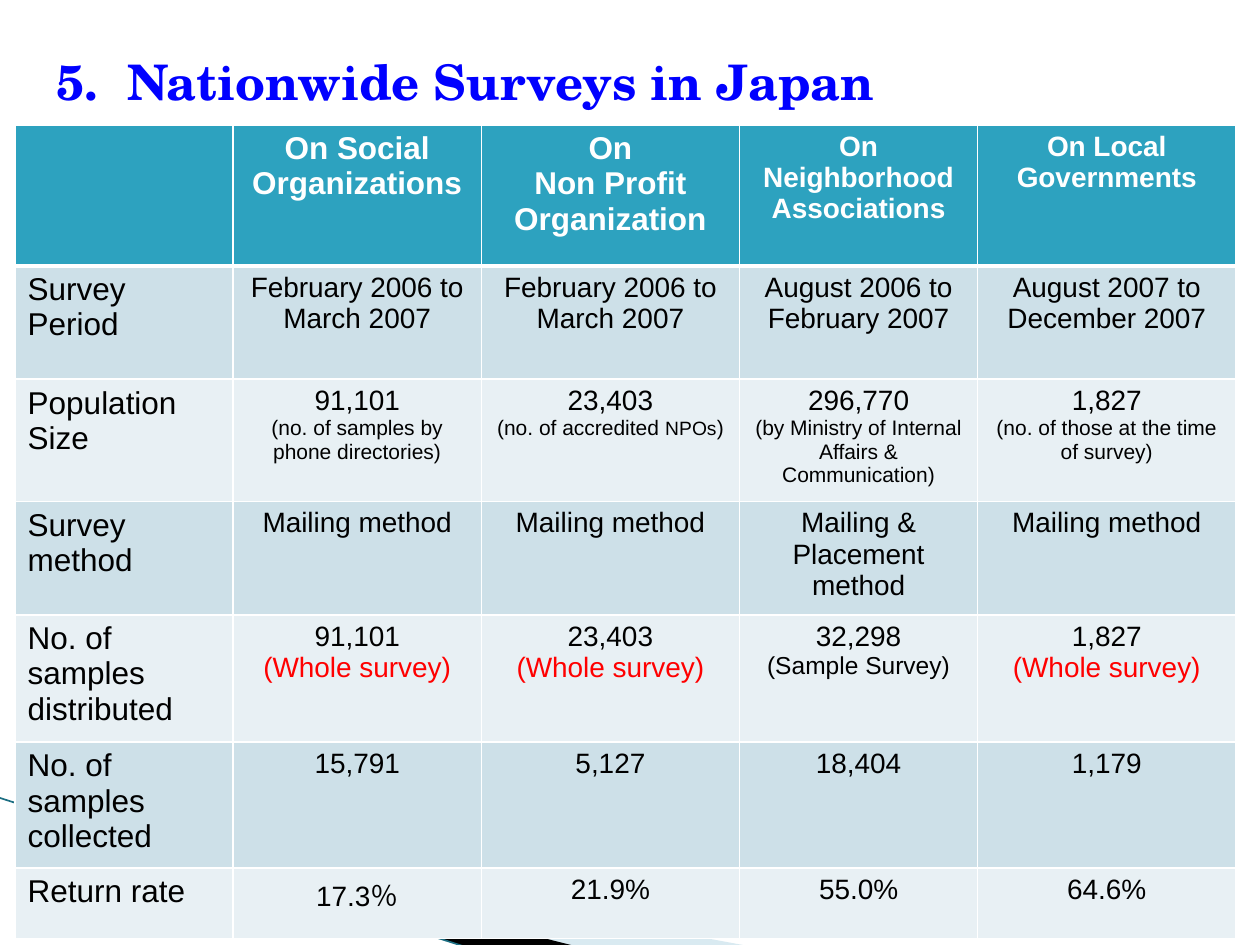
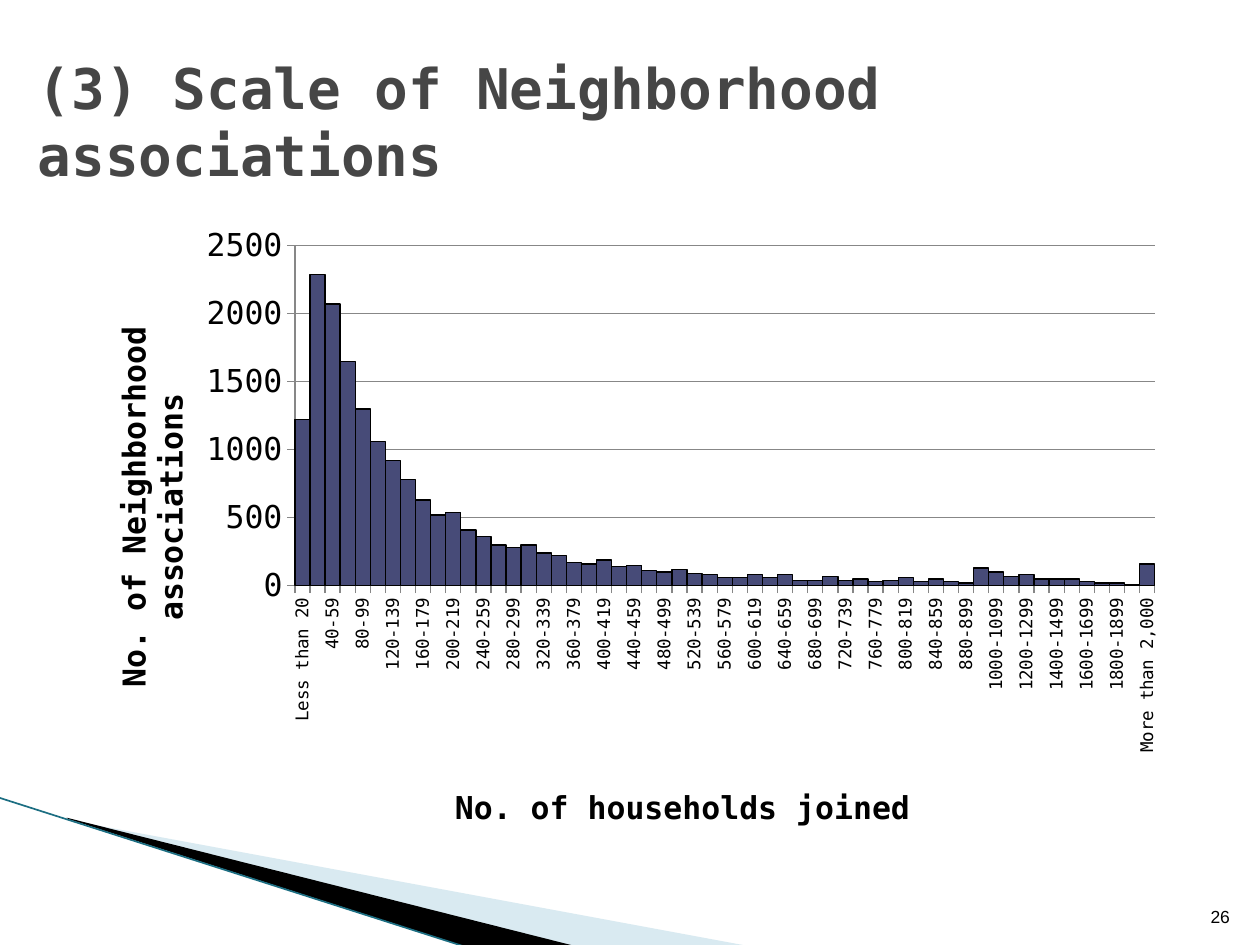
from dataclasses import dataclass

from lxml import etree
from pptx import Presentation
from pptx.chart import data as cd
from pptx.dml import color as col
from pptx.enum import chart as ch, shapes as sh, text as tx
from pptx.oxml import ns
from pptx.util import Inches, Pt


@dataclass(frozen=True)
class Theme:
    # Fonts
    sans: str = "Arial"
    mono: str = "DejaVu Sans Mono"
    serif: str = "TeX Gyre Schola"
    # Colours
    ink: str = "000000"
    white: str = "FFFFFF"
    head: str = "2DA2BF"
    odd: str = "CDE0E8"
    even: str = "E8F0F4"
    red: str = "FF0000"
    blue: str = "0000FF"
    grey: str = "464646"
    bar: str = "474B78"
    grid: str = "878787"
    pale: str = "A0CBDC"
    edge: str = "1C6E82"
    # Type sizes
    big: int = 18
    mid: int = 16
    small: int = 14
    note: int = 12
    tiny: int = 10


T = Theme()

# ---- Survey table: a cell is plain text or a list of paragraphs of runs
SIZES = {"head": T.big, "thin": T.mid, "row": T.big, "cell": T.mid,
         "note": T.note, "abbr": 11, "whole": T.mid, "part": T.small}
INKS = {"head": T.white, "thin": T.white, "whole": T.red}


def noted(num, note, kind="note"):
    return [[(num, "cell")], [(note, kind)]]


def whole(num):
    return noted(num, "(Whole survey)", "whole")


HEADS = ["", "On Social Organizations",
         [[("On", "head")], [("Non Profit Organization", "head")]],
         [[("On Neighborhood Associations", "thin")]],
         [[("On Local Governments", "thin")]]]
NPOS = [[("23,403", "cell")],
        [("(no. of accredited ", "note"), ("NPOs", "abbr"), (")", "note")]]
MAIL = "Mailing method"
ROWS = [
    HEADS,
    ["Survey Period", "February 2006 to March 2007", "February 2006 to March 2007",
     "August 2006 to February 2007", "August 2007 to December 2007"],
    ["Population Size", noted("91,101", "(no. of samples by phone directories)"), NPOS,
     noted("296,770", "(by Ministry of Internal Affairs & Communication)"),
     noted("1,827", "(no. of those at the time of survey)")],
    ["Survey method", MAIL, MAIL, "Mailing & Placement method", MAIL],
    ["No. of samples distributed", whole("91,101"), whole("23,403"),
     noted("32,298", "(Sample Survey)", "part"), whole("1,827")],
    ["No. of samples collected", "15,791", "5,127", "18,404", "1,179"],
    ["Return rate", "17.3％", "21.9%", "55.0%", "64.6%"],
]
WIDTHS = [1.73, 1.97, 2.05, 1.89, 2.05]
HEIGHTS = [1.12, 0.9, 0.97, 0.9, 1.01, 1, 0.56]

# ---- Chart data: households per association, in steps of 20, then of 100
BINS = (["Less than 20"]
        + [f"{n}-{n + 19}" for n in range(20, 900, 20)]
        + [f"{n}-{n + 99}" for n in range(900, 2000, 100)]
        + ["More than 2,000"])
COUNTS = [
    1220, 2290, 2070, 1650, 1300, 1060, 920, 780, 630, 520, 540, 410, 360, 300, 280,
    300, 240, 220, 170, 160, 190, 140, 150, 110, 100, 120, 90, 80, 60, 60, 80, 60, 80,
    40, 40, 70, 40, 50, 30, 40, 60, 30, 50, 30, 20, 130, 100, 70, 80, 50, 50, 50, 30,
    20, 20, 10, 160]


# ---- Helpers
def rgb(code):
    return col.RGBColor.from_string(code)


def style(font, color=T.ink, **props):
    for key, val in props.items():
        setattr(font, key, Pt(val) if key == "size" else val)
    font.color.rgb = rgb(color)


def sub(node, tag, **attrs):
    return etree.SubElement(node, ns.qn(tag), attrs)


def wedge(slide, pts, fill, alpha=None):
    form = slide.shapes.build_freeform(
        Inches(pts[0][0]), Inches(pts[0][1]), scale=1.0)
    form.add_line_segments([(Inches(x), Inches(y)) for x, y in pts[1:]])
    part = form.convert_to_shape()
    part.shadow.inherit = False
    part.line.fill.background()
    part.fill.solid()
    part.fill.fore_color.rgb = rgb(fill)
    if alpha:
        tint = part.element.spPr.find(".//" + ns.qn("a:srgbClr"))
        sub(tint, "a:alpha", val=str(alpha * 1000))


# ---- Parts shared by the slides
def swoosh(slide):
    wedge(slide, [(0.55, 6.51), (5.95, 7.51), (4.56, 7.51), (0.55, 6.5)], T.pale, 40)
    wedge(slide, [(0.53, 6.49), (4.57, 7.51), (3.72, 7.52), (0.54, 6.5)], T.ink)
    line = slide.shapes.add_connector(
        sh.MSO_CONNECTOR.STRAIGHT, Inches(-0.01), Inches(6.33), Inches(3.71), Inches(7.52))
    line.line.color.rgb = rgb(T.edge)
    line.line.width = Pt(0.95)
    sub(line.element.spPr, "a:effectLst")


def set_title(slide, box, words, tab=None, **look):
    title = slide.shapes.title
    title.left, title.top, title.width, title.height = map(Inches, box)
    frame = title.text_frame
    frame.text = words
    for key, val in {"word_wrap": True, "auto_size": tx.MSO_AUTO_SIZE.NONE,
                     "vertical_anchor": tx.MSO_ANCHOR.MIDDLE}.items():
        setattr(frame, key, val)
    para = frame.paragraphs[0]
    para.alignment = tx.PP_ALIGN.LEFT
    if tab:
        stops = sub(para._p.get_or_add_pPr(), "a:tabLst")
        sub(stops, "a:tab", pos=str(Inches(tab)), algn="l")
    style(para.runs[0].font, bold=True, **look)


def start(deck):
    slide = deck.slides.add_slide(deck.slide_layouts[5])
    swoosh(slide)
    return slide


def page_no(slide, box, num):
    area = slide.shapes.add_textbox(*map(Inches, box))
    frame = area.text_frame
    frame.word_wrap = True
    frame.vertical_anchor = tx.MSO_ANCHOR.BOTTOM
    para = frame.paragraphs[0]
    para.alignment = tx.PP_ALIGN.RIGHT
    run = para.add_run()
    run.text = num
    style(run.font, name=T.sans, size=T.tiny)


# ---- Survey table
def edges(cell, first):
    props = cell._tc.get_or_add_tcPr()
    for spot, side in enumerate("LRTB"):
        width = 3 if first and side == "B" else 1
        line = etree.Element(ns.qn(f"a:ln{side}"), w=str(Pt(width)))
        sub(sub(line, "a:solidFill"), "a:srgbClr", val=T.white)
        props.insert(spot, line)


def fill_cell(cell, item, kind, align):
    paras = [[(item, kind)]] if isinstance(item, str) else item
    frame = cell.text_frame
    for i, runs in enumerate(paras):
        para = frame.add_paragraph() if i else frame.paragraphs[0]
        para.alignment = align
        for words, look in runs:
            if words:
                run = para.add_run()
                run.text = words
                style(run.font, INKS.get(look, T.ink), name=T.sans,
                      size=SIZES[look], bold=look in ("head", "thin"))


def add_grid(slide, left, top):
    table = slide.shapes.add_table(
        len(ROWS), len(WIDTHS), Inches(left), Inches(top),
        Inches(sum(WIDTHS)), Inches(sum(HEIGHTS))).table
    for band, width in zip(table.columns, WIDTHS):
        band.width = Inches(width)
    for r, (row, height) in enumerate(zip(ROWS, HEIGHTS)):
        table.rows[r].height = Inches(height)
        shade = T.head if r == 0 else T.odd if r % 2 else T.even
        for c, item in enumerate(row):
            cell = table.cell(r, c)
            cell.fill.solid()
            cell.fill.fore_color.rgb = rgb(shade)
            edges(cell, r == 0)
            kind = "head" if r == 0 else "cell" if c else "row"
            side = tx.PP_ALIGN.LEFT if kind == "row" else tx.PP_ALIGN.CENTER
            fill_cell(cell, item, kind, side)


# ---- Household chart
def place(node, spot, inner=False, **pos):
    """Fix a chart part at fractions of the chart area."""
    for old in node.findall(ns.qn("c:layout")):
        node.remove(old)
    lay = etree.Element(ns.qn("c:layout"))
    node.insert(spot, lay)
    man = sub(lay, "c:manualLayout")
    if inner:
        sub(man, "c:layoutTarget", val="inner")
    for key in "xy":
        sub(man, f"c:{key}Mode", val="edge")
    for key, val in pos.items():
        sub(man, f"c:{key}", val=str(val))


def set_axis(axis, words, size, **pos):
    axis.major_tick_mark = ch.XL_TICK_MARK.OUTSIDE
    axis.format.line.color.rgb = rgb(T.grid)
    style(axis.tick_labels.font, name=T.mono, size=size)
    frame = axis.axis_title.text_frame
    frame.text = words
    style(frame.paragraphs[0].runs[0].font, name=T.mono, size=T.big, bold=True)
    place(axis.axis_title._element, 1, **pos)


def add_bars(slide, box):
    data = cd.CategoryChartData()
    data.categories = BINS
    data.add_series("Series 1", COUNTS)
    chart = slide.shapes.add_chart(
        ch.XL_CHART_TYPE.COLUMN_CLUSTERED, *map(Inches, box), data).chart
    chart.has_legend = chart.has_title = False
    style(chart.font, name=T.mono, size=T.big)

    # Bars
    plot = chart.plots[0]
    plot.gap_width = 0
    plot.vary_by_categories = False
    look = plot.series[0].format
    look.fill.solid()
    look.fill.fore_color.rgb = rgb(T.bar)
    look.line.color.rgb = rgb(T.ink)
    look.line.width = Pt(0.75)

    # Axes
    cat, val = chart.category_axis, chart.value_axis
    set_axis(cat, "No. of households joined", T.tiny, x=0.34, y=0.9)
    set_axis(val, "No. of Neighborhood associations", T.big, x=0.03, y=0.17)
    cat.tick_labels.font._element.getparent().getparent().getparent().find(
        ns.qn("a:bodyPr")).set("rot", "-5400000")
    last = cat._element.find(ns.qn("c:noMultiLvlLbl"))
    for tag, step in (("c:tickLblSkip", "2"), ("c:tickMarkSkip", "1")):
        last.addprevious(etree.Element(ns.qn(tag), val=step))
    for key, num in {"minimum_scale": 0, "maximum_scale": 2500, "major_unit": 500,
                     "has_major_gridlines": True}.items():
        setattr(val, key, num)
    val.major_gridlines.format.line.color.rgb = rgb(T.grid)
    val.tick_labels.number_format = "###0"
    val.tick_labels.number_format_is_linked = False
    area = plot._element.getparent()
    place(area, 0, inner=True, x=0.2, y=0.05, w=0.78, h=0.54)


# ---- Slides
def survey(deck):
    slide = start(deck)
    add_grid(slide, 0.12, 0.99)
    set_title(slide, (0.35, 0.21, 10, 0.87), "5.\tNationwide Surveys in Japan",
              tab=0.56, name=T.serif, size=28, color=T.blue)


def scale(deck):
    slide = start(deck)
    page_no(slide, (9.46, 7.01, 0.4, 0.4), "26")
    set_title(slide, (0.2, 0.52, 9.8, 0.87), "(3) Scale of Neighborhood associations",
              name=T.mono, size=32, color=T.grey)
    add_bars(slide, (0.59, 1.7, 8.75, 5))


def main():
    deck = Presentation()
    deck.slide_width, deck.slide_height = Inches(10), Inches(7.5)
    survey(deck)
    scale(deck)
    deck.save("out.pptx")


if __name__ == "__main__":
    main()
